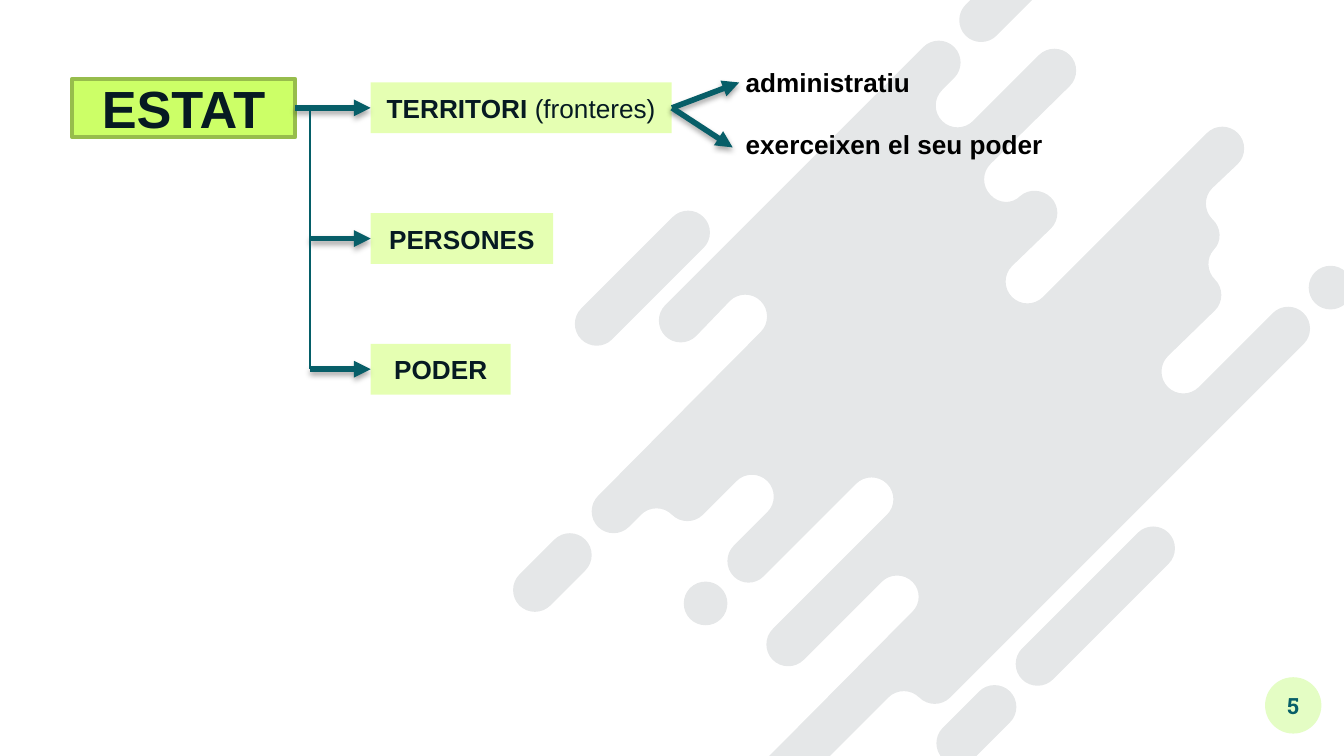
"""Build a slide that breaks the state down into territory, people and power."""
import math

from lxml import etree
from pptx import Presentation
from pptx import util as u
from pptx.dml.color import RGBColor
from pptx.enum import shapes, text
from pptx.oxml import ns

INK, TEAL, LIME = "061A22", "075E68", "CCFF67"
CAP = 0.115
CAPSULES = [
    ((9.9, 2.14), (9.9, 2.14)),
    ((7.4, 5.26), (7.13, 5.53)),
    ((5.25, 4.49), (5.25, 4.49)),
    ((5.4, 6.19), (5.4, 6.19)),
    ((8.58, 4.08), (7.72, 4.94)),
    ((4.24, 4.13), (3.98, 4.39)),
    ((8.01, -0.56), (8.01, -0.56)),
    ((5.12, 1.73), (4.44, 2.41)),
    ((7.69, -0.24), (7.3, 0.15)),
]
SPLASH = [
    (6.87, 0.35), (4.95, 2.27), (4.95, 2.5), (5.18, 2.5), (5.43, 2.24), (5.66, 2.24),
    (5.66, 2.47), (4.45, 3.69), (4.45, 3.92), (4.68, 3.92), (4.77, 3.83), (5, 3.83),
    (5.23, 3.83), (5.48, 3.58), (5.71, 3.58), (5.71, 3.81), (5.46, 4.06), (5.46, 4.29),
    (5.68, 4.29), (6.37, 3.6), (6.6, 3.6), (6.6, 3.83), (5.75, 4.68), (5.75, 4.91),
    (5.98, 4.91), (6.56, 4.33), (6.79, 4.33), (6.79, 4.55), (5.62, 5.73), (5.62, 5.95),
    (5.85, 5.95), (6.61, 5.19), (6.84, 5.19), (7.07, 5.19), (9.7, 2.56), (9.7, 2.33),
    (9.47, 2.33), (8.92, 2.88), (8.69, 2.88), (8.69, 2.65), (9.04, 2.31), (9.04, 2.08),
    (9.03, 1.86), (9.02, 1.63), (9.02, 1.4), (9.21, 1.22), (9.21, 0.99), (8.98, 0.99),
    (7.76, 2.21), (7.53, 2.21), (7.53, 1.98), (7.82, 1.7), (7.82, 1.47), (7.59, 1.46),
    (7.37, 1.45), (7.37, 1.22), (7.96, 0.64), (7.96, 0.41), (7.73, 0.41), (7.24, 0.9),
    (7.01, 0.9), (7.01, 0.67), (7.1, 0.58), (7.1, 0.35), (6.87, 0.35),
]


def color(value):
    """Turn a hex string into a colour."""
    return RGBColor.from_string(value)


def child(parent, tag, **attributes):
    """Append a DrawingML element."""
    values = {name: str(value) for name, value in attributes.items()}
    return etree.SubElement(parent, ns.qn(f"a:{tag}"), values)


def paint(shape, fill, alpha=100, line=None, width=0):
    """Set fill, opacity and outline."""
    shape.fill.solid()
    shape.fill.fore_color.rgb = color(fill)
    if alpha < 100:
        solid = shape.fill._xPr.find(ns.qn("a:solidFill"))
        child(solid[0], "alpha", val=round(alpha * 1000))
    if line:
        shape.line.color.rgb = color(line)
        shape.line.width = u.Pt(width)
    else:
        shape.line.fill.background()


def write(shape, *runs, size=14, font="Arial", ink=INK, align="CENTER", wrap=True, inset=None):
    """Fill a shape with one paragraph of (text, bold) runs."""
    frame = shape.text_frame
    frame.word_wrap = wrap
    frame.auto_size = text.MSO_AUTO_SIZE.NONE if wrap else text.MSO_AUTO_SIZE.SHAPE_TO_FIT_TEXT
    frame.vertical_anchor = text.MSO_ANCHOR.MIDDLE if wrap else text.MSO_ANCHOR.TOP
    if inset is not None:
        frame.margin_left = frame.margin_right = u.Pt(inset)
        frame.margin_top = frame.margin_bottom = u.Pt(inset)
    paragraph = frame.paragraphs[0]
    paragraph.alignment = text.PP_ALIGN[align]
    for words, bold in runs:
        run = paragraph.add_run()
        run.text = words
        run.font.name, run.font.size, run.font.bold = font, u.Pt(size), bold
        run.font.color.rgb = color(ink)


def add_box(slide, kind, left, top, width, height, fill, alpha=100):
    """Add a flat preset shape."""
    shape = slide.shapes.add_shape(kind, u.Pt(left), u.Pt(top), u.Pt(width), u.Pt(height))
    shape.shadow.inherit = False
    paint(shape, fill, alpha)
    return shape


def add_line(slide, start, end, ink=TEAL, width=3, arrow=True):
    """Add a plain line, or an arrow with a soft shadow."""
    line = slide.shapes.add_connector(shapes.MSO_CONNECTOR.STRAIGHT, *map(u.Pt, start + end))
    line.line.color.rgb = color(ink)
    line.line.width = u.Pt(width)
    if arrow:
        child(line.line._get_or_add_ln(), "tailEnd", type="triangle")
    effects = child(line._element.spPr, "effectLst")
    if arrow:
        shadow = child(effects, "outerShdw", blurRad=u.Pt(3.1), dist=u.Pt(1.8),
                       dir=5400000, rotWithShape=0)
        child(child(shadow, "srgbClr", val="000000"), "alpha", val=35000)


def add_label(slide, left, top, width, words):
    """Add a one-line text box."""
    box = slide.shapes.add_textbox(u.Pt(left), u.Pt(top), u.Pt(width), u.Pt(24.5))
    write(box, (words, True), ink="000000", align="LEFT", wrap=False)


def capsule(upper, lower):
    """Return the corners of a round-ended bar that leans at 45 degrees."""
    (ax, ay), (bx, by) = upper, lower
    return [(ax - CAP, ay - CAP), (bx - CAP, by - CAP), (bx - CAP, by + CAP),
            (bx + CAP, by + CAP), (ax + CAP, ay + CAP), (ax + CAP, ay - CAP),
            (ax - CAP, ay - CAP)]


def round_turns(outline):
    """Keep diagonal sides straight and turn level or upright ones into quarter arcs."""
    for command in list(outline):
        if not len(command):
            continue
        qx, qy = int(command[0].get("x")), int(command[0].get("y"))
        if command.tag == ns.qn("a:moveTo"):
            heading = (-1, 1)
        else:
            dx, dy = qx - px, qy - py
            if not (dx or dy):
                outline.remove(command)
            elif min(abs(dx), abs(dy)) > u.Pt(3.6):
                heading = (math.copysign(1, dx), math.copysign(1, dy))
            else:
                reach = max(abs(dx), abs(dy)) / 2
                cx, cy = px + heading[0] * reach, py + heading[1] * reach
                command.tag = ns.qn("a:cubicBezTo")
                for index, (x, y) in enumerate(((px, py), (qx, qy))):
                    handle = child(command, "pt", x=round(x + 0.55 * (cx - x)),
                                   y=round(y + 0.55 * (cy - y)))
                    command.insert(index, handle)
                heading = (math.copysign(1, qx - cx), math.copysign(1, qy - cy))
        px, py = qx, qy


def widen(shape, outline, margin):
    """Grow the frame on all sides so that it holds the bulging arcs."""
    shape.left, shape.top = shape.left - margin, shape.top - margin
    shape.width, shape.height = shape.width + 2 * margin, shape.height + 2 * margin
    outline.set("w", str(shape.width))
    outline.set("h", str(shape.height))
    for point in outline.iter(ns.qn("a:pt")):
        for axis in "xy":
            point.set(axis, str(int(point.get(axis)) + margin))


def add_splash(slide):
    """Add the pale background splash as one freeform."""
    contours = [[(u.Pt(72 * x), u.Pt(72 * y)) for x, y in corners]
                for corners in [capsule(*ends) for ends in CAPSULES] + [SPLASH]]
    builder = slide.shapes.build_freeform(*contours[0][0])
    for index, contour in enumerate(contours):
        if index:
            builder.move_to(*contour[0])
        builder.add_line_segments(contour[1:], close=True)
    shape = builder.convert_to_shape()
    outline = next(shape._element.iter(ns.qn("a:path")))
    round_turns(outline)
    widen(shape, outline, u.Pt(3.4))
    shape.shadow.inherit = False
    paint(shape, INK, alpha=9.6)


def add_title(slide):
    """Format the title placeholder as the root of the diagram."""
    title = slide.shapes.title
    title.left, title.top, title.width, title.height = map(u.Pt, (38.6, 42.2, 119.5, 31.4))
    paint(title, LIME, line="97BD4C", width=2)
    write(title, ("ESTAT", True), size=28)


def main():
    """Build and save the slide."""
    presentation = Presentation()
    presentation.slide_width, presentation.slide_height = u.Pt(720), u.Pt(405)
    slide = presentation.slides.add_slide(presentation.slide_layouts[5])
    oval, rectangle = shapes.MSO_SHAPE.OVAL, shapes.MSO_SHAPE.RECTANGLE

    add_splash(slide)
    number = add_box(slide, oval, 677.7, 362.8, 30.2, 30.2, "E4FDC4")
    write(number, ("5", True), size=12, font="Roboto Slab", ink=TEAL, inset=0)
    add_title(slide)

    spine, column, first, gap, height = 166, 198.6, 57.8, 70, 27.2
    branches = [
        (161.3, [("TERRITORI ", True), ("(fronteres)", False)]),
        (97.7, [("PERSONES", True)]),
        (75, [("PODER", True)]),
    ]
    for row, (width, runs) in enumerate(branches):
        middle = first + row * gap
        add_line(slide, (spine if row else 158, middle), (column, middle))
        box = add_box(slide, rectangle, column, middle - height / 2, width, height, LIME, 50)
        write(box, *runs)
    add_line(slide, (spine, first), (spine, first + 2 * gap), "045E68", 0.75, arrow=False)

    for end in ((396, 44.2), (392.5, 79)):
        add_line(slide, (360, first), end)
    add_label(slide, 392.4, 32.3, 103, "administratiu")
    add_label(slide, 392.4, 65.5, 174, "exerceixen el seu poder")
    presentation.save("out.pptx")


if __name__ == "__main__":
    main()
